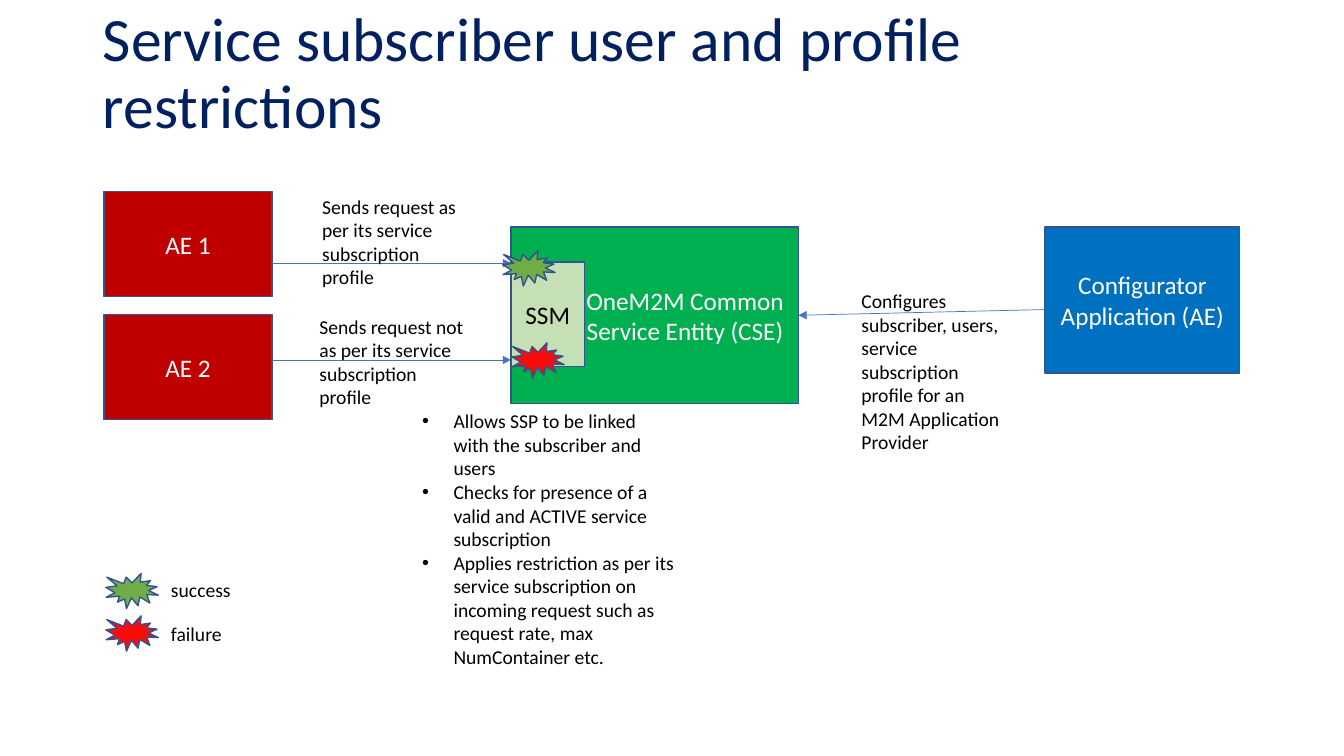
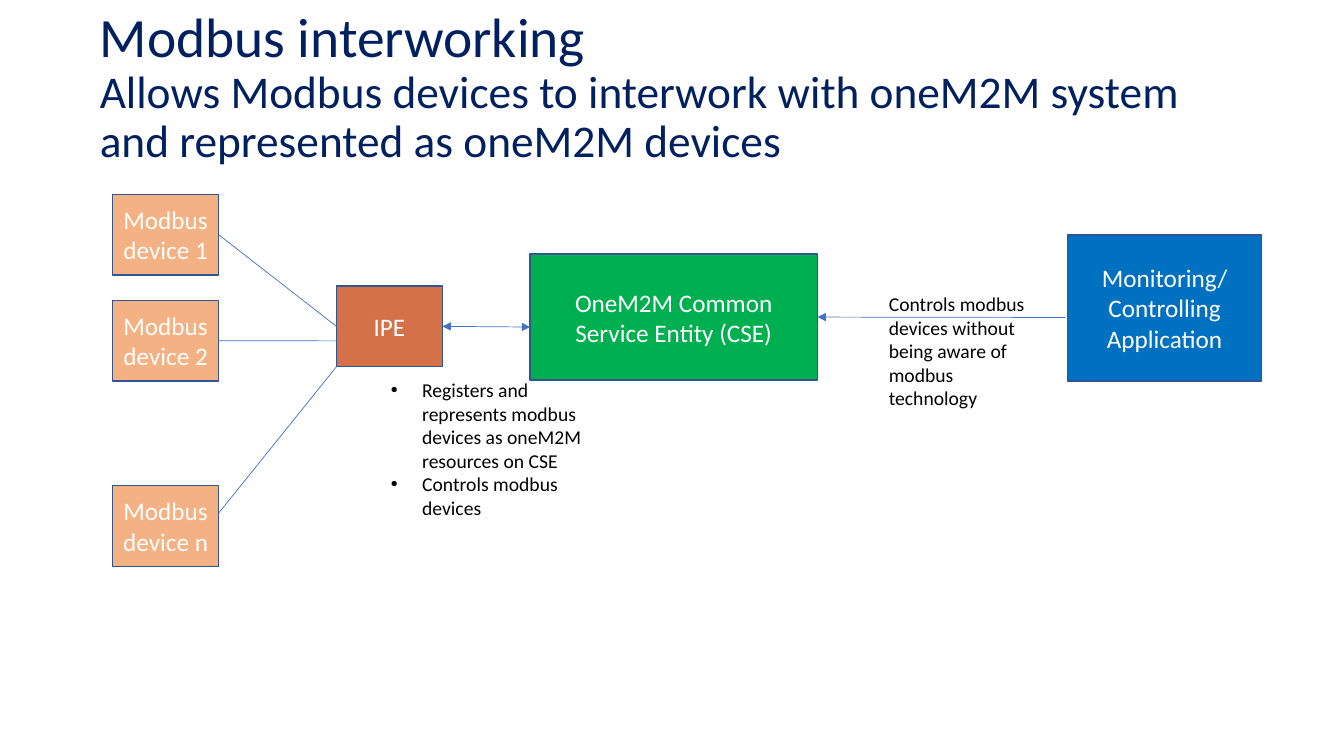
from dataclasses import dataclass
from typing import Optional

from lxml.etree import SubElement
from pptx import Presentation
from pptx.dml.color import RGBColor
from pptx.enum.shapes import MSO_CONNECTOR, MSO_SHAPE
from pptx.enum.text import MSO_ANCHOR, MSO_AUTO_SIZE, PP_ALIGN
from pptx.oxml.ns import qn
from pptx.presentation import Presentation as Deck
from pptx.shapes.autoshape import Shape
from pptx.slide import Slide
from pptx.util import Cm, Pt

FONT = "Calibri"
NAVY = "002060"
WHITE = "FFFFFF"
BLACK = "000000"
GREEN = "00B050"
RED = "C00000"
BLUE = "0070C0"
PALE_GREEN = "C5E0B4"
PEACH = "F4B183"
RUST = "D57149"
SUCCESS = "70AD47"
FAILURE = "FF0909"
OUTLINE = "325491"
LINK = "4472C4"
LEFT_SIDE, RIGHT_SIDE = 1, 3


@dataclass
class Block:
    left: float
    top: float
    width: float
    height: float
    fill: str
    text: str
    color: str = WHITE
    inset: float = 0.25


@dataclass
class Note:
    left: float
    top: float
    width: float
    height: float
    lines: tuple[str, ...]
    bulleted: bool = False


@dataclass
class Seal:
    left: float
    top: float
    fill: str


@dataclass
class Link:
    start: tuple[float, float]
    end: tuple[float, float]
    source: Optional[Shape] = None
    target: Optional[Shape] = None
    source_side: int = RIGHT_SIDE
    target_side: int = LEFT_SIDE
    head: bool = False
    tail: bool = True


def rgb(value: str) -> RGBColor:
    return RGBColor.from_string(value)


def style_font(font, size: float, color: str) -> None:
    font.name = FONT
    font.size = Pt(size)
    font.color.rgb = rgb(color)


def add_titled_slide(deck: Deck, left: float, top: float,
                     lines: tuple[tuple[str, float], ...]) -> Slide:
    slide = deck.slides.add_slide(deck.slide_layouts[5])
    title = slide.shapes.title
    title.left, title.top = Cm(left), Cm(top)
    title.width, title.height = Cm(29.21), Cm(3.68)
    frame = title.text_frame
    frame.vertical_anchor = MSO_ANCHOR.MIDDLE
    frame.word_wrap = True
    frame.auto_size = MSO_AUTO_SIZE.NONE
    heading = frame.paragraphs[0]
    heading.alignment = PP_ALIGN.LEFT
    heading.line_spacing = 0.9
    style_font(heading.font, lines[0][1], NAVY)
    for index, (text, size) in enumerate(lines):
        if index:
            heading.add_line_break()
        run = heading.add_run()
        run.text = text
        run.font.size = Pt(size)
    return slide


def paint(shape: Shape, fill: str) -> None:
    shape.shadow.inherit = False
    shape.fill.solid()
    shape.fill.fore_color.rgb = rgb(fill)
    shape.line.color.rgb = rgb(OUTLINE)
    shape.line.width = Pt(1)


def add_block(slide: Slide, block: Block) -> Shape:
    shape = slide.shapes.add_shape(
        MSO_SHAPE.RECTANGLE, Cm(block.left), Cm(block.top), Cm(block.width), Cm(block.height))
    paint(shape, block.fill)
    frame = shape.text_frame
    frame.word_wrap = True
    frame.margin_left = Cm(block.inset)
    frame.vertical_anchor = MSO_ANCHOR.MIDDLE
    label = frame.paragraphs[0]
    label.text = block.text
    label.alignment = PP_ALIGN.CENTER
    style_font(label.font, 18, block.color)
    return shape


def add_seal(slide: Slide, seal: Seal) -> None:
    paint(slide.shapes.add_shape(MSO_SHAPE.EXPLOSION1, Cm(seal.left), Cm(seal.top),
                                 Cm(1.32), Cm(0.89)), seal.fill)


def add_note(slide: Slide, note: Note) -> None:
    frame = slide.shapes.add_textbox(
        Cm(note.left), Cm(note.top), Cm(note.width), Cm(note.height)).text_frame
    frame.word_wrap = True
    frame.auto_size = MSO_AUTO_SIZE.SHAPE_TO_FIT_TEXT
    for index, line in enumerate(note.lines):
        paragraph = frame.add_paragraph() if index else frame.paragraphs[0]
        paragraph.text = line
        if note.bulleted:
            properties = paragraph._p.get_or_add_pPr()
            properties.set("marL", str(Cm(0.79)))
            properties.set("indent", str(-Cm(0.79)))
            SubElement(properties, qn("a:buFont")).set("typeface", "Arial")
            SubElement(properties, qn("a:buChar")).set("char", "•")
        style_font(paragraph.font, 14, BLACK)


def add_link(slide: Slide, link: Link) -> None:
    connector = slide.shapes.add_connector(
        MSO_CONNECTOR.STRAIGHT, *(Cm(value) for value in link.start + link.end))
    if link.source:
        connector.begin_connect(link.source, link.source_side)
    if link.target:
        connector.end_connect(link.target, link.target_side)
    connector.line.color.rgb = rgb(LINK)
    connector.line.width = Pt(0.5)
    outline = connector.line._get_or_add_ln()
    for tag, shown in (("a:headEnd", link.head), ("a:tailEnd", link.tail)):
        if shown:
            SubElement(outline, qn(tag)).set("type", "triangle")
    SubElement(connector._element.spPr, qn("a:effectLst"))


def build_subscription_slide(deck: Deck) -> None:
    slide = add_titled_slide(
        deck, 2.34, 0.05, (("Service subscriber user and profile restrictions", 44),))
    cse = add_block(slide, Block(12.88, 5.72, 7.24, 4.45, GREEN,
                                 "OneM2M Common Service Entity (CSE)", inset=1.78))
    for top, name in ((4.83, "AE 1"), (7.93, "AE 2")):
        add_block(slide, Block(2.62, top, 4.24, 2.64, RED, name))
    add_block(slide, Block(26.34, 5.72, 4.9, 3.68, BLUE, "Configurator Application (AE)"))
    add_link(slide, Link((26.34, 7.8), (20.12, 7.94), target=cse, target_side=RIGHT_SIDE))
    for request_y in (6.63, 9.07):
        add_link(slide, Link((6.86, request_y), (12.88, request_y)))
    add_block(slide, Block(12.88, 6.6, 1.85, 2.64, PALE_GREEN, "SSM", BLACK))
    notes = (
        Note(21.46, 7.16, 4.24, 4.45, (
            "Configures subscriber, users, service subscription profile for an "
            "M2M Application Provider",)),
        Note(10.39, 10.19, 6.86, 7.44, (
            "Allows SSP to be linked with the subscriber and users",
            "Checks for presence of a valid and ACTIVE service subscription",
            "Applies restriction as per its service subscription on incoming request "
            "such as request rate, max NumContainer etc."), bulleted=True),
        Note(7.87, 4.78, 4.24, 2.64, (
            "Sends request as per its service subscription profile",)),
        Note(7.8, 7.8, 4.24, 3.25, (
            "Sends request not as per its service subscription profile",)),
        Note(4.06, 14.45, 2.11, 0.89, ("success",)),
        Note(4.06, 15.54, 2.11, 0.89, ("failure",)),
    )
    for note in notes:
        add_note(slide, note)
    for seal in (Seal(12.67, 6.32, SUCCESS), Seal(12.9, 8.64, FAILURE),
                 Seal(2.67, 14.45, SUCCESS), Seal(2.67, 15.52, FAILURE)):
        add_seal(slide, seal)


def build_modbus_slide(deck: Deck) -> None:
    slide = add_titled_slide(deck, 2.26, 0.38, (
        ("Modbus interworking", 39.6),
        ("Allows Modbus devices to interwork with oneM2M system and represented "
         "as oneM2M devices", 32.4)))
    cse = add_block(slide, Block(13.36, 6.4, 7.24, 3.18, GREEN,
                                 "OneM2M Common Service Entity (CSE)"))
    add_block(slide, Block(26.9, 5.92, 4.9, 3.68, BLUE, "Monitoring/Controlling Application"))
    ipe = add_block(slide, Block(8.48, 7.21, 2.67, 2.03, RUST, "IPE"))
    first_device, second_device, _ = [
        add_block(slide, Block(2.84, top, 2.67, 2.03, PEACH, f"Modbus device {number}"))
        for top, number in ((4.9, "1"), (7.57, "2"), (12.24, "n"))]
    links = (
        Link((26.85, 8), (20.6, 7.99), target=cse, target_side=RIGHT_SIDE),
        Link((5.51, 5.92), (8.48, 8.23), source=first_device, target=ipe, tail=False),
        Link((5.51, 8.59), (8.48, 8.59), source=second_device, tail=False),
        Link((5.51, 12.93), (8.48, 9.24), tail=False),
        Link((11.15, 8.22), (13.36, 8.24), source=ipe, head=True),
    )
    for link in links:
        add_link(slide, link)
    add_note(slide, Note(22.15, 7.24, 4.24, 3.25, (
        "Controls modbus devices without being aware of modbus technology",)))
    add_note(slide, Note(9.6, 9.4, 5.74, 3.84, (
        "Registers and represents modbus devices as oneM2M resources on CSE",
        "Controls modbus devices"), bulleted=True))


def main() -> None:
    deck = Presentation()
    deck.slide_width, deck.slide_height = Cm(33.87), Cm(19.05)
    build_subscription_slide(deck)
    build_modbus_slide(deck)
    deck.save("out.pptx")


if __name__ == "__main__":
    main()
